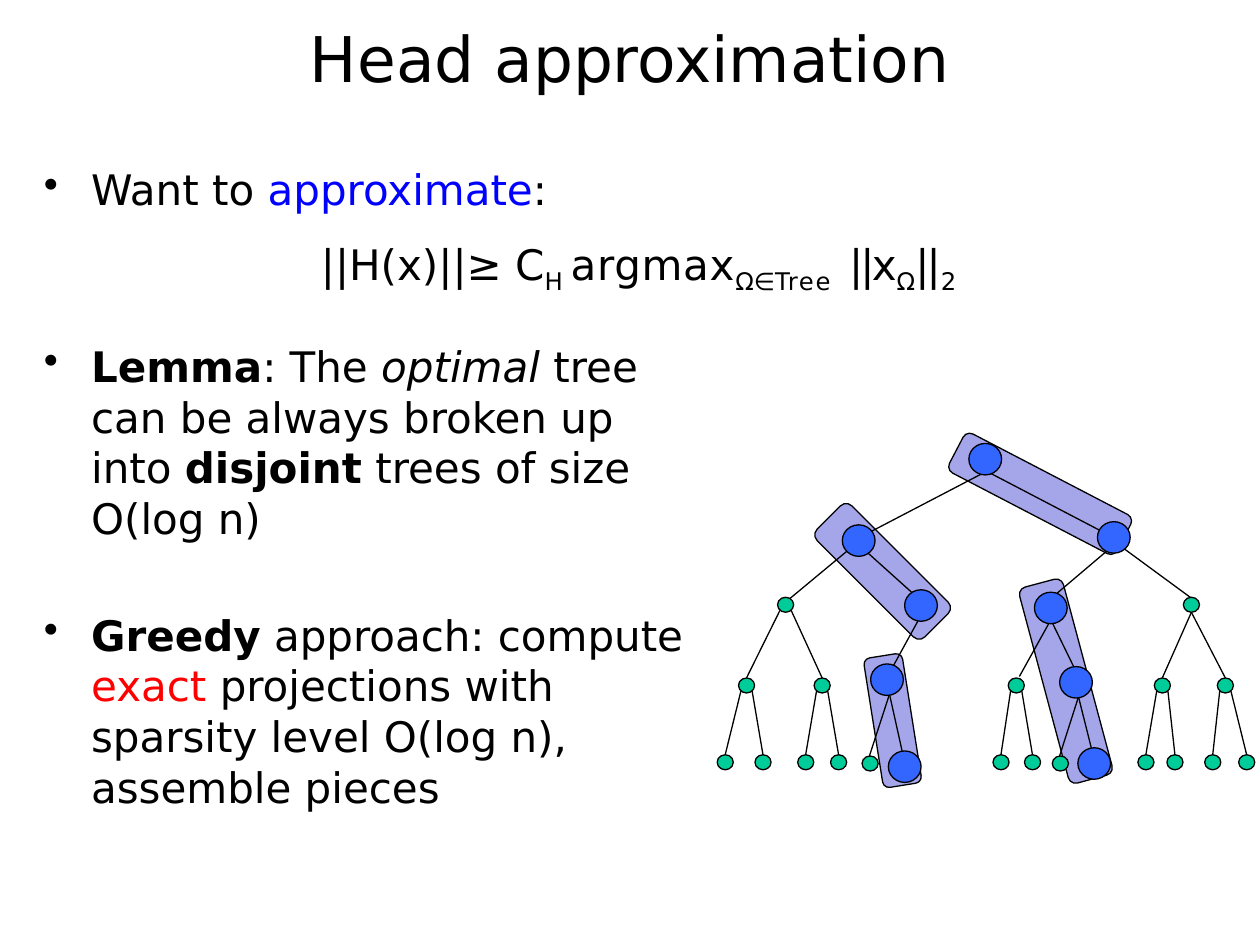
"""Build the "Head approximation" slide: bullets, a formula and a tree split into blocks."""
from lxml import etree
from pptx import Presentation
from pptx.dml.color import RGBColor
from pptx.enum.shapes import MSO_CONNECTOR, MSO_SHAPE
from pptx.enum.text import MSO_ANCHOR, PP_ALIGN
from pptx.oxml.ns import qn
from pptx.util import Pt

OVAL, ROUND = MSO_SHAPE.OVAL, MSO_SHAPE.ROUNDED_RECTANGLE
LINE = MSO_CONNECTOR.STRAIGHT
MIDDLE, CENTER = MSO_ANCHOR.MIDDLE, PP_ALIGN.CENTER
FONT = "DejaVu Sans"
COLORS = {"black": "000000", "blue": "0000FF", "red": "FF0000",
          "block": "A5A5E9", "small": "00CC99", "big": "3366FF"}


def rgb(name):
    return RGBColor.from_string(COLORS[name])


def add_node(kind, cx, cy, w, h, fill, angle=0):
    sp = s.shapes.add_shape(kind, Pt(cx - w / 2), Pt(cy - h / 2), Pt(w), Pt(h))
    sp.rotation = angle
    sp.shadow.inherit = False
    sp.fill.solid()
    sp.fill.fore_color.rgb = rgb(fill)
    sp.line.color.rgb = rgb("black")
    sp.line.width = Pt(0.75)


prs = Presentation()
prs.slide_width, prs.slide_height = Pt(720), Pt(540)
s = prs.slides.add_slide(prs.slide_layouts[6])

tf = s.shapes.add_textbox(Pt(54), Pt(-12), Pt(612), Pt(90)).text_frame
tf.word_wrap = True
tf.vertical_anchor = MIDDLE
p = tf.paragraphs[0]
p.text = "Head approximation"
p.alignment = CENTER
p.font.name, p.font.size = FONT, Pt(36)
p.font.color.rgb = rgb("black")

bullets = [
    (0, [("Want to ", ""), ("approximate", "blue"), (":", "")]),
    (72, [("Lemma", "bold"), (": The ", ""), ("optimal ", "italic"),
          ("tree can be always broken up into ", ""), ("disjoint", "bold"),
          (" trees of size O(log n)", "")]),
    (38, [("Greedy", "bold"), (" approach: compute ", ""), ("exact ", "red"),
          ("projections with sparsity level O(log n), assemble pieces", "")]),
]
tf = s.shapes.add_textbox(Pt(18), Pt(90), Pt(391), Pt(426)).text_frame
tf.word_wrap = True
for i, (gap, runs) in enumerate(bullets):
    p = tf.add_paragraph() if i else tf.paragraphs[0]
    p.space_before, p.line_spacing = Pt(gap), Pt(28.9)
    p.font.name, p.font.size = FONT, Pt(24)
    pPr = p._p.get_or_add_pPr()
    pPr.set("marL", str(Pt(27)))
    pPr.set("indent", str(Pt(-27)))
    bullet = etree.Element(qn("a:buChar"), char="•")
    pPr.find(qn("a:defRPr")).addprevious(bullet)
    for text, style in runs:
        r = p.add_run()
        r.text = text
        r.font.bold = style == "bold"
        r.font.italic = style == "italic"
        r.font.color.rgb = rgb(style if style in COLORS else "black")

blocks = [(594.4, 282.2, 25.2, 108, -62.5), (504.4, 326.5, 28.1, 87.1, -45),
          (510.1, 411.8, 22.3, 74.9, -9), (609.1, 389.2, 25.9, 115.9, -15)]
for cx, cy, w, h, angle in blocks:
    add_node(ROUND, cx, cy, w, h, "block", angle)

formula = [("||H(x)||≥ C", 0, 0), ("H ", -25, 0), ("argmax", 0, 0.4), ("Ω", -25, -1.2),
           ("∈", -25, -1.6), ("Tree", -25, 0.9), (" ", 0, 2), ("||x", 0, -1.6),
           ("Ω", -25, -1.2), ("||", 0, -1.6), ("2", -25, -1.6)]
tf = s.shapes.add_textbox(Pt(183.4), Pt(136), Pt(480), Pt(40)).text_frame
tf.word_wrap = True
tf.margin_left = tf.margin_right = tf.margin_top = tf.margin_bottom = 0
p = tf.paragraphs[0]
p.font.name, p.font.size = FONT, Pt(24)
p.font.color.rgb = rgb("black")
for text, base, spacing in formula:
    r = p.add_run()
    r.text = text
    rPr = r._r.get_or_add_rPr()
    rPr.set("baseline", str(base * 1000))
    rPr.set("spc", str(round(spacing * 100)))

SMALL_W, SMALL_H, BIG_W, BIG_H = 9.2, 8.6, 18.7, 18
LEVELS = [345.6, 391.7, 435.6]
small_nodes = [(448.9, 0, 3.2, (426.6, 469.8)), (680.8, 0, 0, (664.2, 700.2)),
               (426.6, 1, 3.2, (414.4, 436)), (469.8, 1, 3.2, (460.4, 479.2)),
               (580.7, 1, 3.2, (572, 590)), (664.2, 1, 3.2, (654.8, 671.4)),
               (700.2, 1, 3.2, (693, 712.4))]
single_leaves = [(497.2, 436.3), (605.9, 436.3)]
big_nodes = [(563, 262.4), (490.7, 308.9), (636.5, 307.1), (526.3, 346), (600.5, 347.4),
             (506.9, 388.4), (614.9, 389.9), (517, 438.1), (625.3, 436.3)]

edges = [((563.8, 269.3), [(496.1, 304.6), (631.4, 304.6)]),
         ((489.6, 310.3), [(451.4, 342), (524.9, 342)]),
         ((637.9, 310.3), [(600.5, 342), (681.1, 342)]),
         ((524.9, 354.2), [(508.3, 384.5)]),
         ((508.3, 396.7), [(515.5, 429.1), (496.8, 432)]),
         ((600.5, 354.2), [(616.3, 386.6), (582.5, 386.6)]),
         ((616.3, 398.2), [(624.2, 429.8), (605.5, 432)])]
for x, level, spread, children in small_nodes:
    y = LEVELS[level] + (3.2 if spread else SMALL_H / 2)
    child_top = LEVELS[level + 1] - SMALL_H / 2
    for side, child in zip((-1, 1), children):
        edges.append(((x + side * spread, y), [(child, child_top)]))

for (x1, y1), ends in edges:
    for x2, y2 in ends:
        c = s.shapes.add_connector(LINE, Pt(x1), Pt(y1), Pt(x2), Pt(y2))
        c.line.color.rgb = rgb("black")
        c.line.width = Pt(0.75)
        etree.SubElement(c._element.spPr, qn("a:effectLst"))

leaves = [(x, LEVELS[2]) for _, level, _, kids in small_nodes if level == 1 for x in kids]
inner = [(x, LEVELS[level]) for x, level, _, _ in small_nodes]
for cx, cy in inner + leaves + single_leaves:
    add_node(OVAL, cx, cy, SMALL_W, SMALL_H, "small")
for cx, cy in big_nodes:
    add_node(OVAL, cx, cy, BIG_W, BIG_H, "big")

prs.save("out.pptx")
